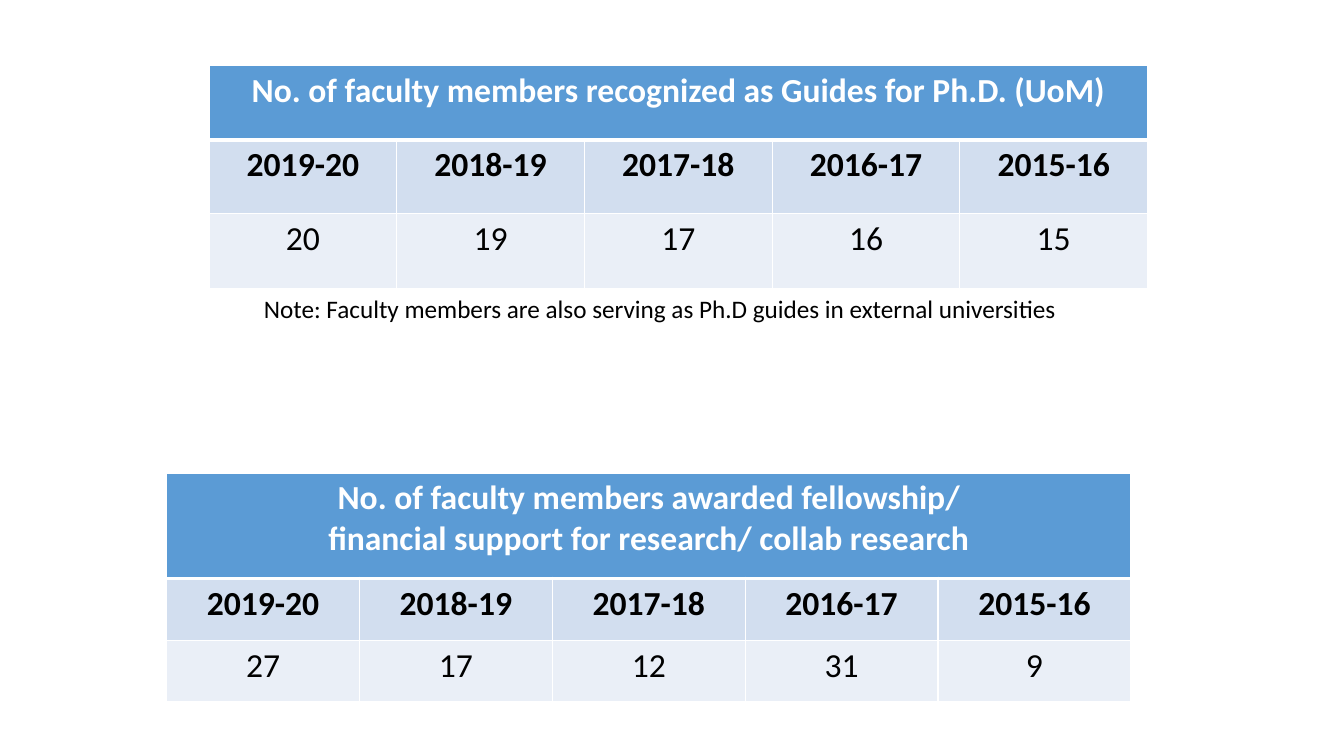
import dataclasses

import pptx
import pptx.dml.color
import pptx.enum.text
import pptx.oxml
import pptx.oxml.ns
import pptx.util
from pptx.util import Cm


@dataclasses.dataclass(frozen=True)
class Theme:
    font: str = "Calibri"
    table_size: int = 24
    note_size: int = 18
    white: str = "FFFFFF"
    black: str = "000000"
    title_fill: str = "5B9BD5"
    year_fill: str = "D2DEEF"
    count_fill: str = "EAEFF7"


THEME = Theme()


def format_text(text_frame, size, color, bold, alignment):
    for paragraph in text_frame.paragraphs:
        paragraph.alignment = alignment
        for run in paragraph.runs:
            values = {"name": THEME.font, "size": pptx.util.Pt(size), "bold": bold}
            for name, value in values.items():
                setattr(run.font, name, value)
            run.font.color.rgb = pptx.dml.color.RGBColor.from_string(color)


def add_borders(cell, bottom_width):
    """Draw white 1 pt borders, with a bottom border of its own width in points."""
    properties = cell._tc.get_or_add_tcPr()
    for side, width in {"L": 1, "R": 1, "T": 1, "B": bottom_width}.items():
        properties.append(pptx.oxml.parse_xml(
            f'<a:ln{side} {pptx.oxml.ns.nsdecls("a")} w="{pptx.util.Pt(width)}">'
            f'<a:solidFill><a:srgbClr val="{THEME.white}"/></a:solidFill></a:ln{side}>'
        ))


presentation = pptx.Presentation()
presentation.slide_width = Cm(33.87)
presentation.slide_height = Cm(19.05)
slide = presentation.slides.add_slide(presentation.slide_layouts[6])

years = ["2019-20", "2018-19", "2017-18", "2016-17", "2015-16"]
tables = [
    {
        "title": "No. of faculty members recognized as Guides for Ph.D. (UoM)",
        "counts": [20, 19, 17, 16, 15],
        "left": 5.27, "top": 1.65, "column_width": 4.73,
        "row_heights": [1.87, 1.87, 1.87],
    },
    {
        "title": "No. of faculty members awarded fellowship/\n"
                 "financial support for research/ collab research",
        "counts": [27, 17, 12, 31, 9],
        "left": 4.2, "top": 11.92, "column_width": 4.86,
        "row_heights": [2.66, 1.55, 1.55],
    },
]
row_styles = [
    (THEME.title_fill, THEME.white, True, 3),
    (THEME.year_fill, THEME.black, True, 1),
    (THEME.count_fill, THEME.black, False, 1),
]

for data in tables:
    table = slide.shapes.add_table(
        3, len(years), Cm(data["left"]), Cm(data["top"]),
        Cm(data["column_width"] * len(years)), Cm(sum(data["row_heights"])),
    ).table
    for column in table.columns:
        column.width = Cm(data["column_width"])
    for row, height in zip(table.rows, data["row_heights"]):
        row.height = Cm(height)

    table.cell(0, 0).merge(table.cell(0, len(years) - 1))
    table.cell(0, 0).text = data["title"]
    for column_index, (year, count) in enumerate(zip(years, data["counts"])):
        table.cell(1, column_index).text = year
        table.cell(2, column_index).text = str(count)

    for row, (fill, color, bold, bottom_width) in zip(table.rows, row_styles):
        for cell in row.cells:
            add_borders(cell, bottom_width)
            cell.fill.solid()
            cell.fill.fore_color.rgb = pptx.dml.color.RGBColor.from_string(fill)
            format_text(cell.text_frame, THEME.table_size, color, bold,
                        pptx.enum.text.PP_ALIGN.CENTER)

note = slide.shapes.add_textbox(Cm(6.4), Cm(7.26), Cm(20.7), Cm(1.02))
note.text_frame.word_wrap = False
note.text_frame.auto_size = pptx.enum.text.MSO_AUTO_SIZE.SHAPE_TO_FIT_TEXT
note.text_frame.text = (
    "Note: Faculty members are also serving as Ph.D guides in external universities"
)
format_text(note.text_frame, THEME.note_size, THEME.black, False,
            pptx.enum.text.PP_ALIGN.LEFT)

presentation.save("out.pptx")
